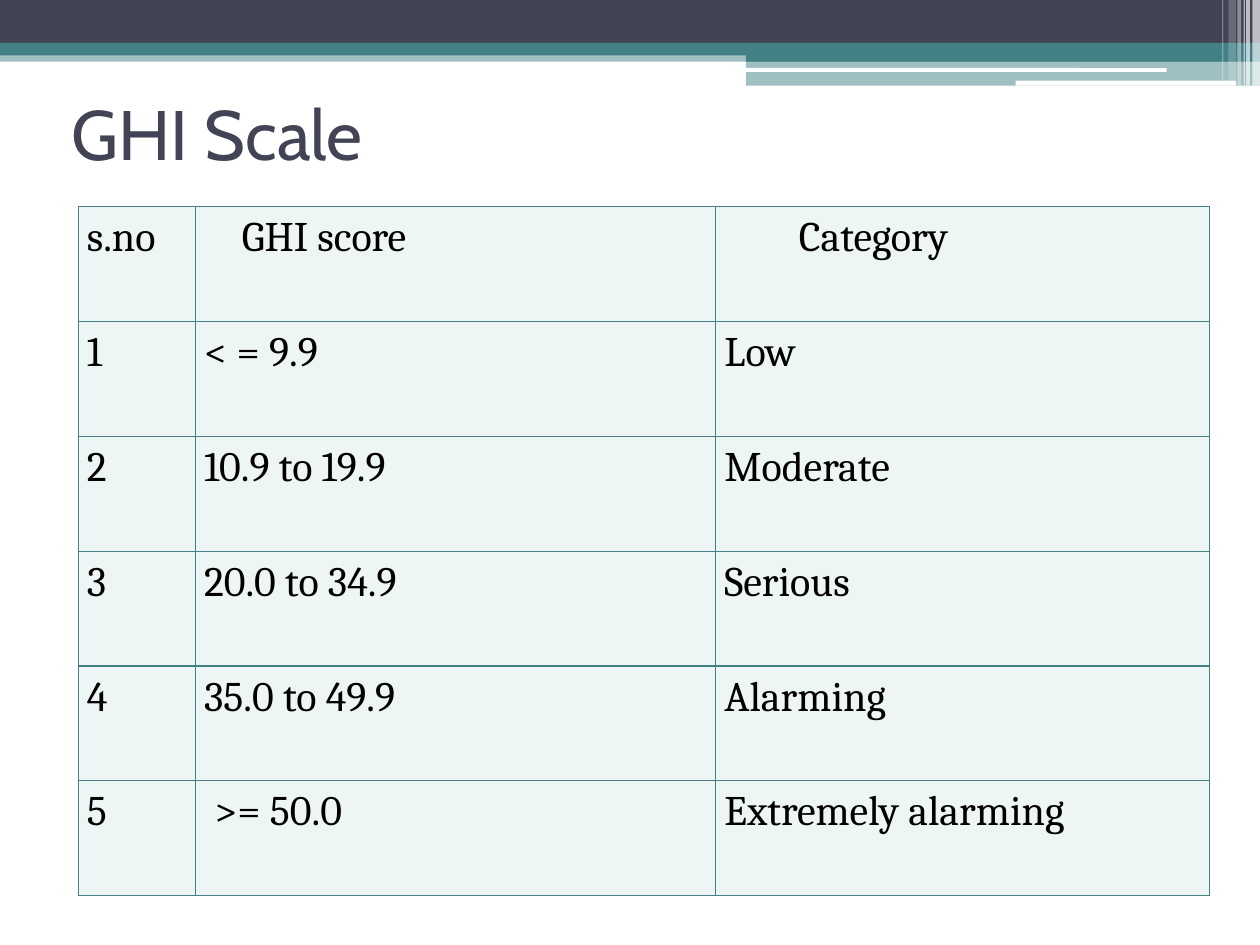
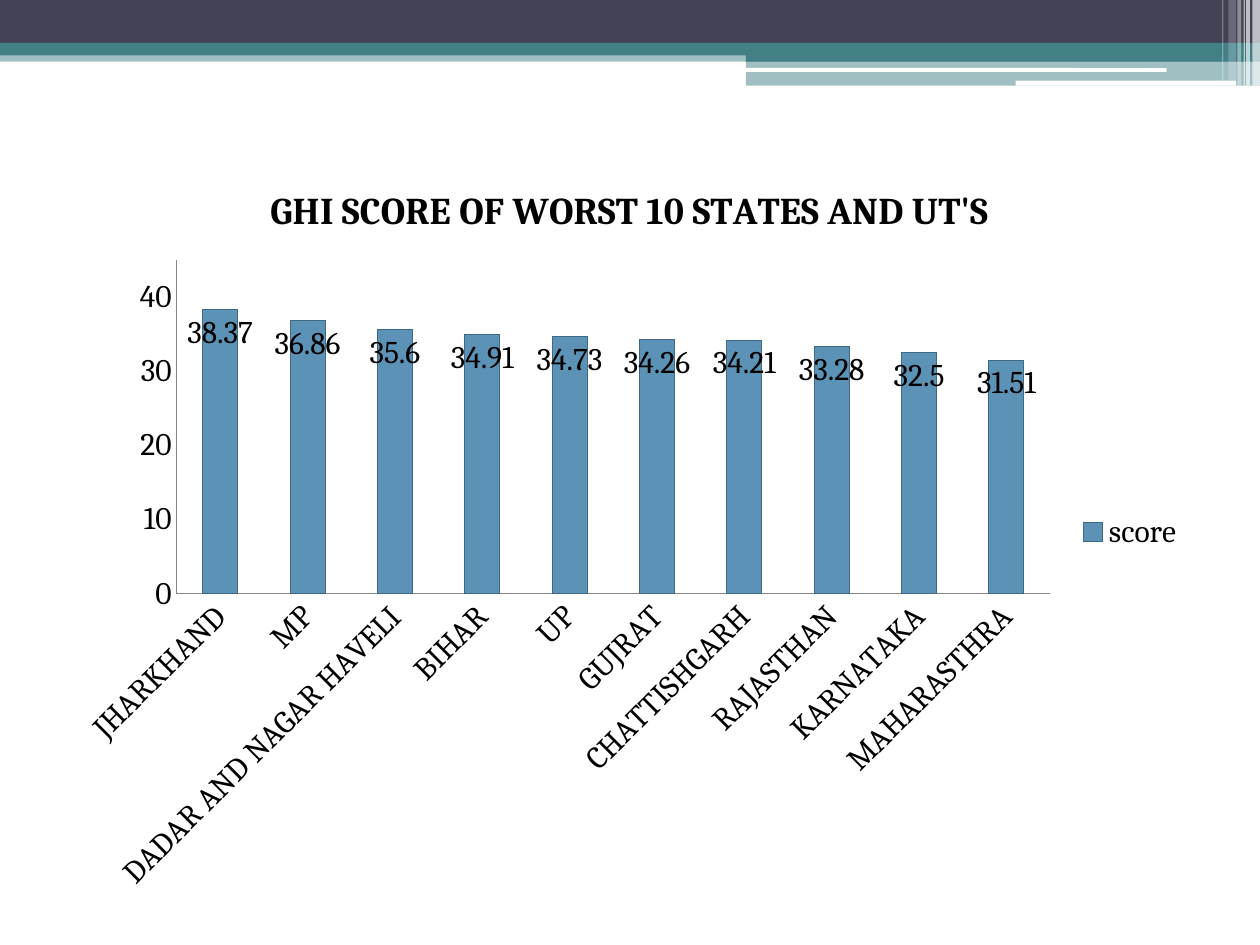
from lxml.etree import SubElement
from pptx import Presentation
from pptx.chart.data import CategoryChartData
from pptx.dml.color import RGBColor
from pptx.enum.chart import (XL_CHART_TYPE, XL_LABEL_POSITION,
                             XL_LEGEND_POSITION, XL_TICK_MARK)
from pptx.enum.shapes import MSO_SHAPE
from pptx.enum.text import MSO_ANCHOR, PP_ALIGN
from pptx.oxml.ns import qn
from pptx.util import Inches, Pt

NAVY = RGBColor(0x42, 0x44, 0x56)
TEAL = RGBColor(0x43, 0x80, 0x86)
PALE = RGBColor(0xED, 0xF5, 0xF5)
BLUE = RGBColor(0x5C, 0x92, 0xB5)
EDGE = RGBColor(0x3F, 0x6A, 0x85)
GRAY = RGBColor(0x86, 0x86, 0x86)
WHITE = RGBColor(0xFF, 0xFF, 0xFF)
BLACK = RGBColor(0, 0, 0)
HEAD_FONT, BODY_FONT = "Cabin", "Cambria"

# left, top, width, height, colour, opacity in percent
BANDS = [
    (0, 0.4, 10, 0.09, TEAL, 50),
    (0, 0, 10, 0.34, NAVY, 100),
    (0, 0.34, 10, 0.1, TEAL, 100),
    (5.92, 0.39, 4.08, 0.1, TEAL, 100),
    (5.92, 0.48, 4.08, 0.2, TEAL, 50),
]
RULES = [
    (5.91, 0.54, 3.35, 0.03, WHITE, 100),
    (8.06, 0.64, 1.75, 0.04, WHITE, 100),
]
STRIPES = [
    (9.94, 0, 0.06, 0.68, WHITE, 65),
    (9.89, 0, 0.03, 0.68, WHITE, 65),
    (9.87, 0, 0.01, 0.68, WHITE, 60),
    (9.82, 0, 0.03, 0.68, WHITE, 40),
    (9.75, 0, 0.06, 0.64, WHITE, 20),
    (9.7, 0, 0.01, 0.64, WHITE, 30),
]

SCALE = [
    ("s.no", "GHI score", "Category"),
    ("1", "< = 9.9", "Low"),
    ("2", "10.9 to 19.9", "Moderate"),
    ("3", "20.0 to 34.9", "Serious"),
    ("4", "35.0 to 49.9", "Alarming"),
    ("5", ">= 50.0", "Extremely alarming"),
]
WIDTHS = (0.93, 4.13, 3.92)
INDENTS = {(0, 1): 0.3, (0, 2): 0.59, (5, 1): 0.08}

SCORES = {
    "JHARKHAND": 38.37, "MP": 36.86, "DADAR AND NAGAR HAVELI": 35.6,
    "BIHAR": 34.91, "UP": 34.73, "GUJRAT": 34.26, "CHATTISHGARH": 34.21,
    "RAJASTHAN": 33.28, "KARNATAKA": 32.5, "MAHARASTHRA": 31.51,
}


def style(font, size, color=BLACK, name=BODY_FONT, bold=False):
    font.size, font.name, font.bold = Pt(size), name, bold
    font.color.rgb = color


def add_bar(slide, kind, left, top, width, height, color, alpha):
    bar = slide.shapes.add_shape(kind, Inches(left), Inches(top),
                                 Inches(width), Inches(height))
    bar.shadow.inherit = False
    bar.line.fill.background()
    bar.fill.solid()
    bar.fill.fore_color.rgb = color
    if alpha < 100:
        tint = next(bar.element.spPr.iter(qn("a:srgbClr")))
        SubElement(tint, qn("a:alpha"), val=str(alpha * 1000))
    return bar


def add_bands(master, slide):
    """Draw the top band and move it to the master, so every slide has it."""
    bars = [add_bar(slide, kind, *row)
            for kind, rows in ((MSO_SHAPE.RECTANGLE, BANDS),
                               (MSO_SHAPE.ROUNDED_RECTANGLE, RULES),
                               (MSO_SHAPE.RECTANGLE, STRIPES))
            for row in rows]
    tree = master.shapes.element
    for num, bar in enumerate(bars, 100):
        bar.element.nvSpPr.cNvPr.set("id", str(num))
        tree.append(bar.element)


def set_title(slide, text):
    title = slide.shapes.title
    title.left, title.top = Inches(0.47), Inches(0.47)
    title.width, title.height = Inches(9), Inches(1.17)
    frame = title.text_frame
    frame.text = text
    frame.vertical_anchor = MSO_ANCHOR.MIDDLE
    para = frame.paragraphs[0]
    para.alignment = PP_ALIGN.LEFT
    style(para.runs[0].font, 40, NAVY, HEAD_FONT)


def set_edges(cell):
    props = cell._tc.get_or_add_tcPr()
    for side in ("lnL", "lnR", "lnT", "lnB"):
        line = SubElement(props, qn(f"a:{side}"), w=str(Pt(0.75)))
        fill = SubElement(line, qn("a:solidFill"))
        SubElement(fill, qn("a:srgbClr"), val=str(TEAL))


def set_cell(cell, text, indent):
    set_edges(cell)
    cell.fill.solid()
    cell.fill.fore_color.rgb = PALE
    cell.margin_left, cell.margin_right = Inches(0.07 + indent), Inches(0.07)
    cell.margin_top = cell.margin_bottom = 0
    cell.text_frame.text = text
    para = cell.text_frame.paragraphs[0]
    para.alignment = PP_ALIGN.JUSTIFY
    para.line_spacing = 1.15
    para.space_before = Pt(2.6)
    style(para.runs[0].font, 24)


def add_scale(slide):
    table = slide.shapes.add_table(
        len(SCALE), len(WIDTHS), Inches(0.62), Inches(1.64),
        Inches(sum(WIDTHS)), Inches(5.47)).table
    table.first_row = table.horz_banding = False
    for col, width in zip(table.columns, WIDTHS):
        col.width = Inches(width)
    for i, row in enumerate(SCALE):
        for j, text in enumerate(row):
            set_cell(table.cell(i, j), text, INDENTS.get((i, j), 0))


def set_axis(axis):
    axis.has_major_gridlines = False
    axis.major_tick_mark = axis.minor_tick_mark = XL_TICK_MARK.NONE
    axis.format.line.color.rgb = GRAY


def add_scores(slide):
    data = CategoryChartData()
    data.categories = SCORES.keys()
    data.add_series("score", SCORES.values())
    chart = slide.shapes.add_chart(
        XL_CHART_TYPE.COLUMN_CLUSTERED, Inches(0.5), Inches(1.25),
        Inches(9), Inches(5.94), data).chart
    style(chart.font, 18)

    # Title and legend
    frame = chart.chart_title.text_frame
    frame.text = "GHI SCORE OF WORST 10 STATES AND UT'S"
    style(frame.paragraphs[0].runs[0].font, 21.6, bold=True)
    chart.has_legend = True
    chart.legend.position = XL_LEGEND_POSITION.RIGHT
    chart.legend.include_in_layout = False

    # Axes
    set_axis(chart.category_axis)
    set_axis(chart.value_axis)
    chart.value_axis.minimum_scale = 0
    chart.value_axis.maximum_scale = 45
    chart.value_axis.major_unit = 10

    # Columns and their labels
    plot = chart.plots[0]
    plot.vary_by_categories = False
    plot.gap_width = 150
    look = plot.series[0].format
    look.fill.solid()
    look.fill.fore_color.rgb = BLUE
    look.line.color.rgb = EDGE
    plot.has_data_labels = True
    labels = plot.data_labels
    labels.show_value = True
    labels.position = XL_LABEL_POSITION.INSIDE_END
    style(labels.font, 18)


def main():
    deck = Presentation()
    deck.slide_width, deck.slide_height = Inches(10), Inches(7.5)
    only_title, blank = deck.slide_layouts[5], deck.slide_layouts[6]

    # Scale table
    slide = deck.slides.add_slide(only_title)
    add_bands(deck.slide_master, slide)
    set_title(slide, "GHI Scale")
    add_scale(slide)

    # Chart of states
    add_scores(deck.slides.add_slide(blank))
    deck.save("out.pptx")


if __name__ == "__main__":
    main()
